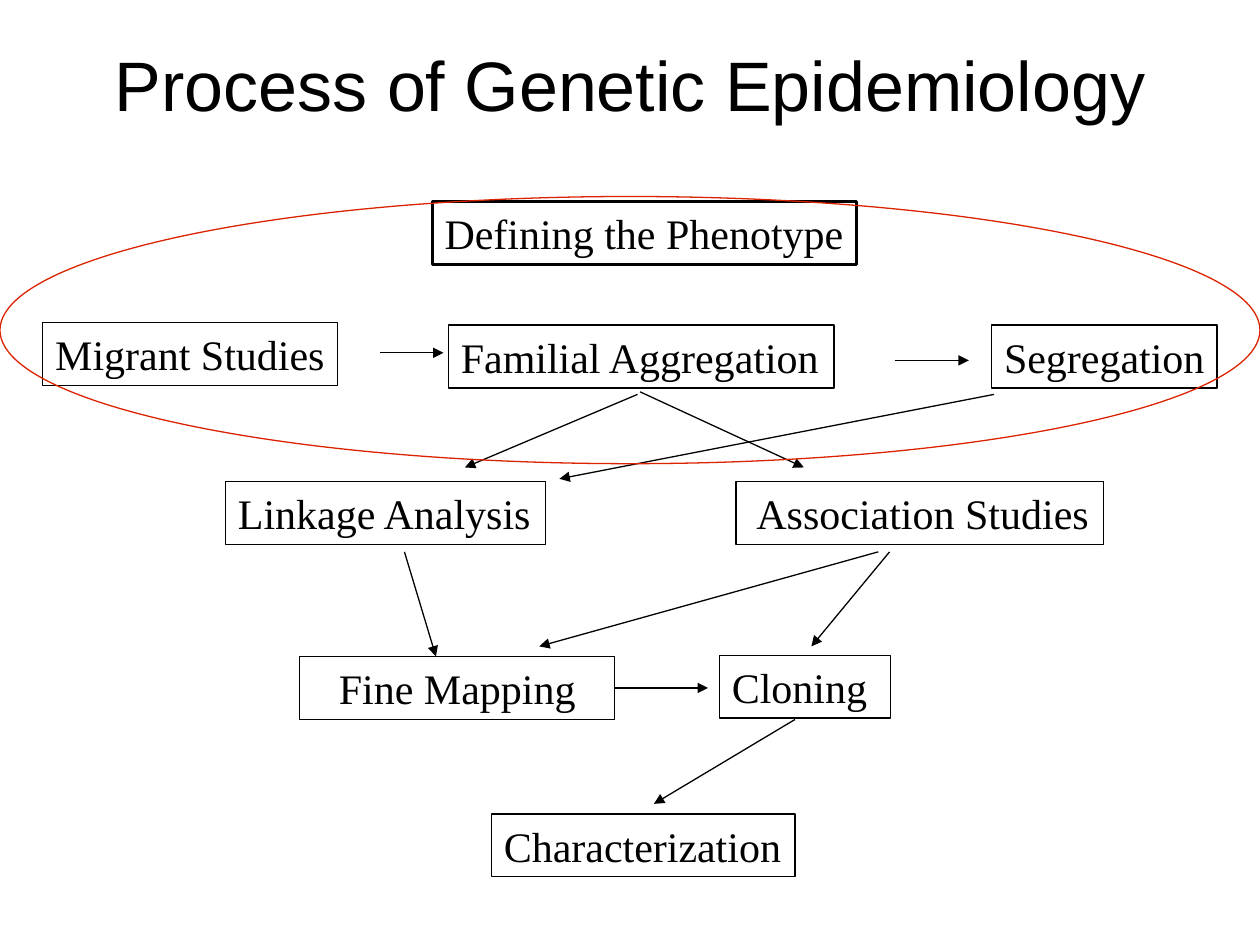
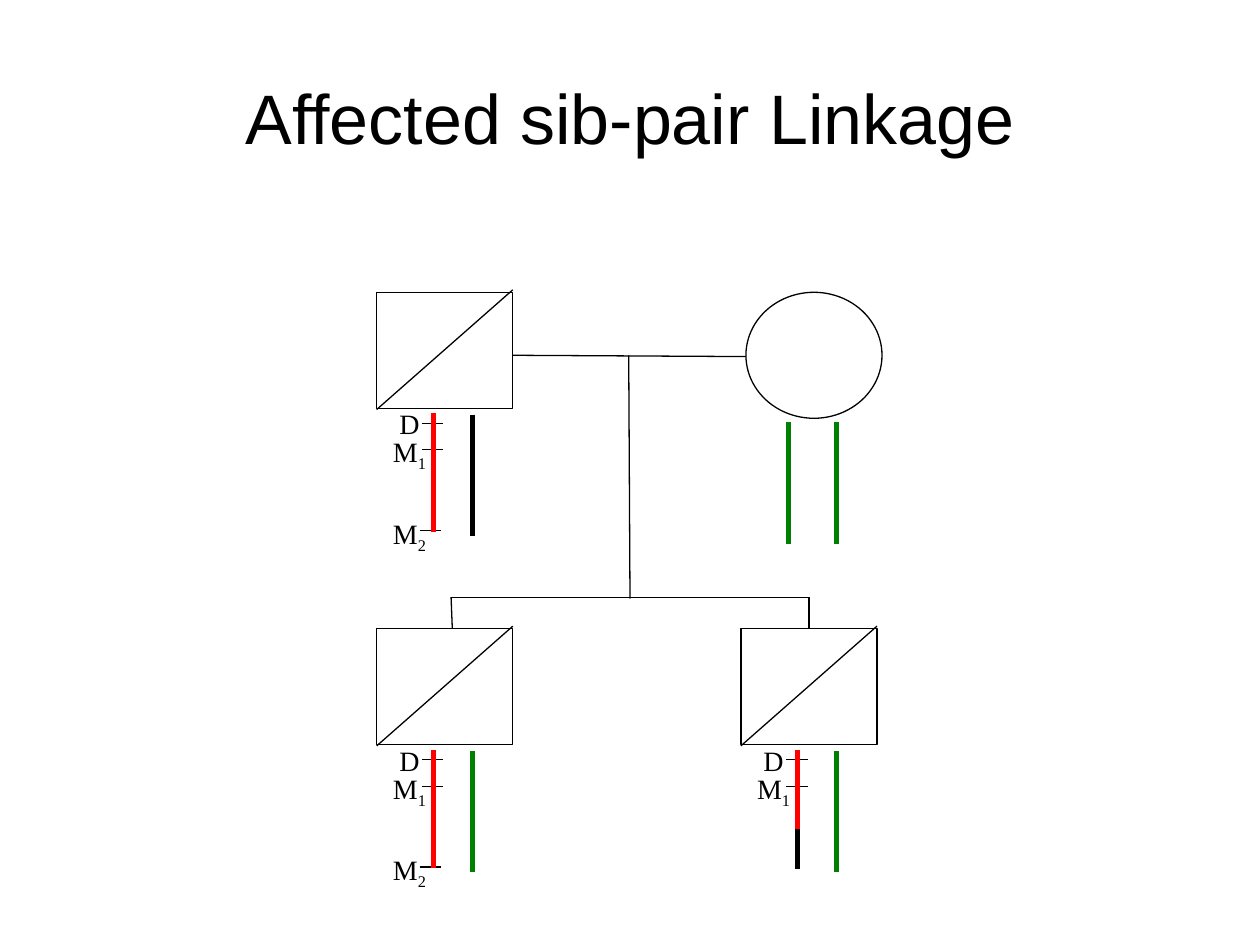
import dataclasses
import typing

import lxml.etree
import pptx
import pptx.dml.color
import pptx.enum.shapes
import pptx.enum.text
import pptx.oxml.ns
import pptx.util

Inches = pptx.util.Inches
Pt = pptx.util.Pt
Kind = pptx.enum.shapes.MSO_SHAPE
Align = pptx.enum.text.PP_ALIGN
Anchor = pptx.enum.text.MSO_ANCHOR
Fit = pptx.enum.text.MSO_AUTO_SIZE


@dataclasses.dataclass(frozen=True)
class Theme:
    black: str = "000000"
    red: str = "FF0000"
    green: str = "008000"
    ring: str = "DC2300"
    head: str = "Arial"
    text: str = "Times New Roman"
    title: float = 40
    box: float = 24
    label: float = 16
    thin: float = 0.75
    bold: float = 1.75
    strand: float = 3


THEME = Theme()


class Area(typing.NamedTuple):
    left: float
    top: float
    width: float
    height: float


class Step(typing.NamedTuple):
    text: str
    left: float
    top: float
    width: float
    weight: float = THEME.thin
    align: Align = Align.LEFT


class Line(typing.NamedTuple):
    x1: float
    y1: float
    x2: float
    y2: float


class Mark(typing.NamedTuple):
    """A locus on a chromosome, placed from the square's corner."""
    name: str
    sub: str
    label: Area
    tick: Line


class Strand(typing.NamedTuple):
    color: str
    x: float
    top: float
    end: float


class Person(typing.NamedTuple):
    left: float
    top: float
    marks: tuple
    strands: tuple


# Shared drawing helpers
def paint(color: str) -> pptx.dml.color.RGBColor:
    return pptx.dml.color.RGBColor.from_string(color)


def style(font, name: str, size: float) -> None:
    font.name, font.size = name, Pt(size)
    font.color.rgb = paint(THEME.black)


def start(deck, text: str, area: Area):
    """Add a slide with its title."""
    slide = deck.slides.add_slide(deck.slide_layouts[5])
    title = slide.shapes.title
    title.left, title.top, title.width, title.height = map(Inches, area)
    frame = title.text_frame
    frame.text = text
    frame.auto_size = Fit.NONE
    frame.vertical_anchor = Anchor.MIDDLE
    frame.paragraphs[0].alignment = Align.CENTER
    style(frame.paragraphs[0].font, THEME.head, THEME.title)
    return slide


def outline(slide, kind: Kind, area: Area, color: str = THEME.black,
            weight: float = THEME.thin):
    shape = slide.shapes.add_shape(kind, *map(Inches, area))
    shape.shadow.inherit = False
    shape.fill.background()
    shape.line.color.rgb = paint(color)
    shape.line.width = Pt(weight)
    return shape


def draw(slide, line: Line, color: str = THEME.black,
         weight: float = THEME.thin, arrow: bool = False) -> None:
    item = slide.shapes.add_connector(
        pptx.enum.shapes.MSO_CONNECTOR.STRAIGHT, *map(Inches, line))
    item.line.color.rgb = paint(color)
    item.line.width = Pt(weight)
    qn = pptx.oxml.ns.qn
    if arrow:
        lxml.etree.SubElement(item.line._get_or_add_ln(), qn("a:tailEnd"),
                              type="triangle")
    lxml.etree.SubElement(item._element.spPr, qn("a:effectLst"))


def shift(area, left: float, top: float):
    """Move an area or a line by an offset."""
    if isinstance(area, Line):
        return Line(area.x1 + left, area.y1 + top,
                    area.x2 + left, area.y2 + top)
    return area._replace(left=area.left + left, top=area.top + top)


# Flow chart
STEPS = (
    Step("Migrant Studies", 0.34, 2.56, 2.34),
    Step("Familial Aggregation", 3.56, 2.58, 3.06),
    Step("Segregation", 7.87, 2.58, 1.79),
    Step(" Association Studies", 5.84, 3.82, 2.92),
    Step("Linkage Analysis", 1.79, 3.82, 2.54),
    Step("Fine Mapping", 2.38, 5.21, 2.5, align=Align.CENTER),
    Step("Cloning", 5.71, 5.2, 1.36),
    Step("Defining the Phenotype", 3.43, 1.6, 3.37, THEME.bold),
    Step("Characterization", 3.9, 6.46, 2.41),
)
ARROWS = (
    Line(3.02, 2.8, 3.52, 2.8),
    Line(7.89, 3.13, 4.44, 3.8),
    Line(5.06, 3.13, 3.69, 3.71),
    Line(5.08, 3.11, 6.38, 3.71),
    Line(7.1, 2.86, 7.69, 2.86),
    Line(3.21, 4.38, 3.46, 5.21),
    Line(6.97, 4.38, 4.28, 5.13),
    Line(7.06, 4.38, 6.44, 5.13),
    Line(4.88, 5.46, 5.62, 5.46),
    Line(6.31, 5.71, 5.19, 6.38),
)


def add_step(slide, step: Step) -> None:
    area = Area(step.left, step.top, step.width, 0.5)
    frame = outline(slide, Kind.RECTANGLE, area,
                    weight=step.weight).text_frame
    frame.text = step.text
    frame.word_wrap = True
    frame.vertical_anchor = Anchor.MIDDLE
    if step.align == Align.LEFT:
        frame.margin_right = 0
    frame.paragraphs[0].alignment = step.align
    style(frame.paragraphs[0].font, THEME.text, THEME.box)


def flow(deck) -> None:
    slide = start(deck, "Process of Genetic Epidemiology",
                  Area(0, 0.25, 10, 0.83))
    for step in STEPS:
        add_step(slide, step)
    for line in ARROWS:
        draw(slide, line, arrow=True)
    outline(slide, Kind.OVAL, Area(0, 1.56, 10, 2.12), THEME.ring)


# Pedigree
SQUARE = Area(0, 0, 1.08, 0.92)
SLASH = Line(0, 0.93, 1.08, -0.02)
MARKS = (
    Mark("D", "", Area(0.08, 0.86, 0.36, 0.37), Line(0.36, 1.04, 0.53, 1.04)),
    Mark("M", "1", Area(0.03, 1.08, 0.46, 0.41), Line(0.36, 1.25, 0.53, 1.25)),
    Mark("M", "2", Area(0.03, 1.73, 0.46, 0.41), Line(0.34, 1.89, 0.51, 1.89)),
)
RED = Strand(THEME.red, 0.45, 0.96, 1.9)
GREEN = Strand(THEME.green, 0.76, 0.97, 1.93)
BLACK = GREEN._replace(color=THEME.black)
CROSS = (RED._replace(end=1.62), Strand(THEME.black, 0.45, 1.59, 1.91))
PEOPLE = (
    Person(2.99, 2.32, MARKS, (BLACK, RED)),
    Person(2.99, 4.99, MARKS, (GREEN, RED)),
    Person(5.88, 4.99, MARKS[:2], (GREEN, *CROSS)),
)
MOTHER = Area(5.92, 2.32, 1.08, 1)
LINKS = (
    Line(4.07, 2.82, 5.92, 2.83),
    Line(4.99, 2.82, 5, 4.75),
    Line(3.58, 4.74, 6.42, 4.74),
    Line(3.58, 4.74, 3.59, 4.99),
    Line(6.42, 4.74, 6.42, 4.99),
)


def add_mark(slide, mark: Mark, left: float, top: float) -> None:
    area = shift(mark.label, left, top)
    frame = slide.shapes.add_textbox(*map(Inches, area)).text_frame
    frame.word_wrap = False
    para = frame.paragraphs[0]
    para.alignment = Align.CENTER
    style(para.font, THEME.text, THEME.label)
    para.add_run().text = mark.name
    if mark.sub:
        run = para.add_run()
        run.text = mark.sub
        run._r.get_or_add_rPr().set("baseline", "-25000")
    draw(slide, shift(mark.tick, left, top))


def add_strand(slide, strand: Strand, left: float, top: float) -> None:
    line = Line(strand.x, strand.top, strand.x, strand.end)
    draw(slide, shift(line, left, top), strand.color, THEME.strand)


def add_person(slide, person: Person) -> None:
    spot = person.left, person.top
    outline(slide, Kind.RECTANGLE, shift(SQUARE, *spot))
    draw(slide, shift(SLASH, *spot))
    for mark in person.marks:
        add_mark(slide, mark, *spot)
    for strand in person.strands:
        add_strand(slide, strand, *spot)


def tree(deck) -> None:
    slide = start(deck, "Affected sib-pair Linkage", Area(0.5, 0.3, 9, 1.25))
    for line in LINKS:
        draw(slide, line)
    outline(slide, Kind.OVAL, MOTHER)
    for x in (0.34, 0.72):
        add_strand(slide, Strand(THEME.green, x, 1.03, 2),
                   MOTHER.left, MOTHER.top)
    for person in PEOPLE:
        add_person(slide, person)


def main() -> None:
    deck = pptx.Presentation()
    deck.slide_width, deck.slide_height = Inches(10), Inches(7.5)
    flow(deck)
    tree(deck)
    deck.save("out.pptx")


if __name__ == "__main__":
    main()
